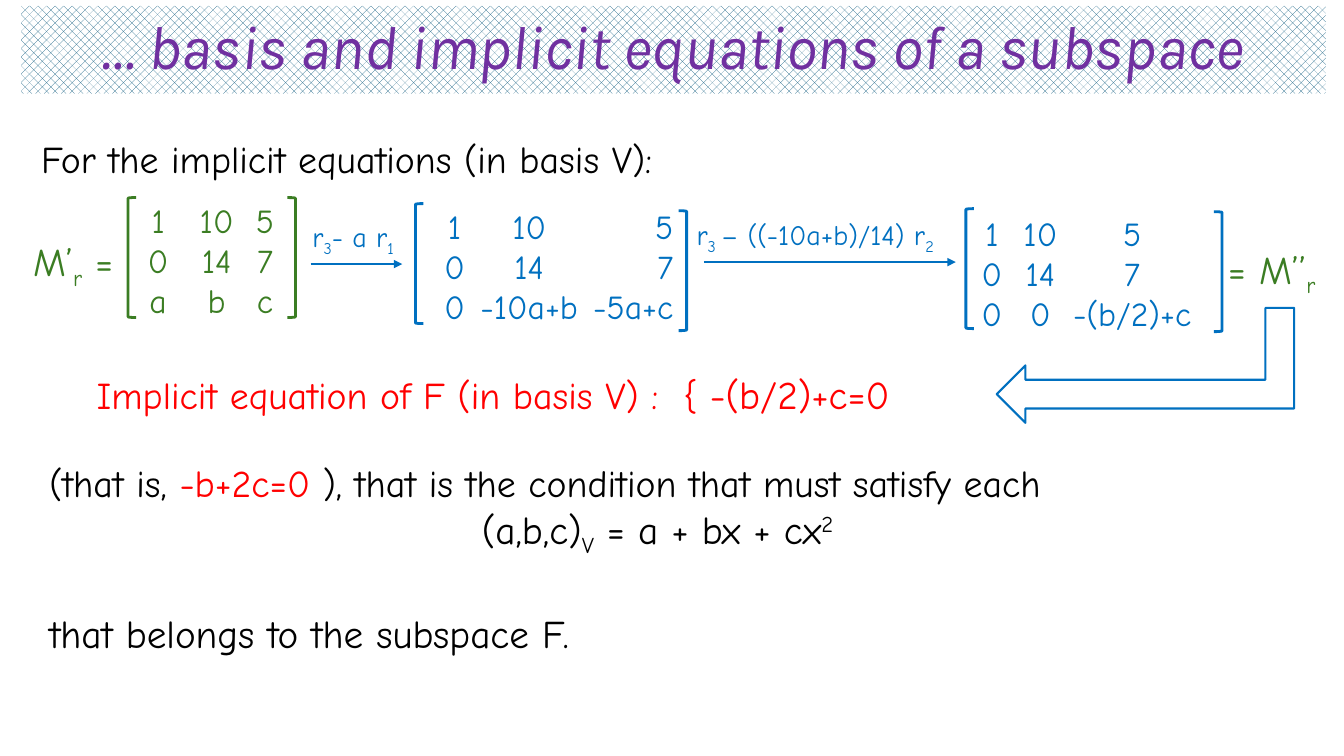
from lxml.etree import SubElement
from pptx import Presentation
from pptx.dml.color import RGBColor
from pptx.enum.dml import MSO_PATTERN
from pptx.enum.shapes import MSO_CONNECTOR, MSO_SHAPE
from pptx.enum.text import MSO_ANCHOR, PP_ALIGN
from pptx.oxml.ns import qn
from pptx.util import Inches, Pt

COLORS = {"title": "7030A0", "weave": "156082", "white": "FFFFFF", "black": "000000",
          "green": "3B7D23", "blue": "0070C0", "red": "FF0000"}
TITLE_FONT, BODY_FONT = "Karla", "Comic Neue"
SUB, SUP = -25000, 30000

TITLE = "… basis and implicit equations of a subspace"

# Runs are (text, format overrides).
LABELS = [
    # box, size, color, wrap, runs
    ((0.31, 1.3, 12.06, 1.01), 27, "black", True,
     [("For the implicit equations (in basis V):", {})]),
    ((0.23, 2.31, 1.06, 0.57), 28, "green", False,
     [("M’", {}), ("r", {"base": SUB}), (" =", {})]),
    ((3, 2.13, 1.14, 0.44), 20, "blue", True,
     [("r", {}), ("3", {"base": SUB}), ("- a r", {}), ("1", {"base": SUB})]),
    ((6.81, 2.11, 2.88, 0.44), 20, "blue", True,
     [("r", {}), ("3 ", {"base": SUB}), ("– ((-10a+b)/14) r", {}), ("2", {"base": SUB})]),
    ((12.08, 2.38, 1.25, 0.57), 28, "green", False,
     [("= M’’", {}), ("r", {"base": SUB})]),
    ((0.86, 3.62, 10.89, 1.04), 27, "red", True,
     [("Implicit equation of F (in basis V) :  { ", {}), ("-(b/2)+c=0", {"size": 28})]),
]

MATRICES = [
    {"box": (1.17, 1.93, 2.72, 2.05), "color": "green",
     "brackets": [(1.27, 1.96), (2.85, 1.96)],
     "tabs": [(0.3, "ctr"), (0.88, "ctr"), (1.36, "ctr")],
     "rows": [("1", "10", "5"), ("0", "14", "7"), ("a", "b", "c")]},
    {"box": (4.1, 1.99, 3.03, 2.05), "color": "blue",
     "brackets": [(4.12, 2.02), (6.73, 2.09)],
     "tabs": [(0.31, "ctr"), (1.05, "ctr"), (2.48, "r")],
     "rows": [("1", "10", "5"), ("0", "14", "7"), ("0", "-10a+b", "-5a+c")]},
    {"box": (9.44, 2.06, 3.03, 2.05), "color": "blue",
     "brackets": [(9.58, 2.07), (12.04, 2.1)],
     "tabs": [(0.3, "ctr"), (0.78, "ctr"), (1.69, "ctr")],
     "rows": [("1", "10", "5"), ("0", "14", "7"), ("0", "0", "-(b/2)+c")]},
]
BRACKET_SIZE = (0.08, 1.19)

ROW_ARROWS = [(3.08, 3.99, 2.62), (6.98, 9.48, 2.6)]  # start x, end x, y

CONCLUSION_BOX = (0.39, 4.51, 11.65, 1.83)
FORMULA_INDENT = 4.29
CONCLUSION = [
    [("(that is, ", {"size": 27}), ("-b+2c=0 ", {"size": 27, "color": "red"}),
     ("), that is the condition that must satisfy each", {"size": 27})],
    [("(a,b,c)", {}), ("V", {"base": SUB}), (" = a + bx + cx", {}), ("2", {"base": SUP})],
    [("that belongs to the subspace F.", {})],
]


def rgb(name):
    return RGBColor.from_string(COLORS[name])


def add_run(p, text, size=28, color="black", font=BODY_FONT, italic=False, base=0):
    r = p.add_run()
    r.text = text
    r.font.size, r.font.name, r.font.italic = Pt(size), font, italic
    r.font.color.rgb = rgb(color)
    if base:
        r.font._element.set("baseline", str(base))


def add_text(slide, box, paragraphs, wrap=True, **style):
    """Add a text box; each paragraph is a list of (text, overrides) runs."""
    tf = slide.shapes.add_textbox(*map(Inches, box)).text_frame
    tf.word_wrap = wrap
    for i, runs in enumerate(paragraphs):
        p = tf.paragraphs[0] if i == 0 else tf.add_paragraph()
        for text, overrides in runs:
            add_run(p, text, **{**style, **overrides})
    return tf


def add_outline(slide, kind, box, color, width):
    sp = slide.shapes.add_shape(kind, *map(Inches, box))
    sp.shadow.inherit = False
    sp.fill.background()
    sp.line.color.rgb = rgb(color)
    sp.line.width = Pt(width)
    return sp


def add_title(slide):
    sp = slide.shapes.add_shape(MSO_SHAPE.RECTANGLE, *map(Inches, (0.21, 0.06, 12.94, 0.87)))
    sp.shadow.inherit = False
    sp.line.fill.background()
    sp.fill.patterned()
    sp.fill.pattern = MSO_PATTERN.WEAVE
    sp.fill.fore_color.rgb = rgb("weave")
    sp.fill.back_color.rgb = rgb("white")
    tf = sp.text_frame
    tf.word_wrap, tf.vertical_anchor = True, MSO_ANCHOR.MIDDLE
    p = tf.paragraphs[0]
    p.alignment, p.line_spacing = PP_ALIGN.CENTER, 0.9
    add_run(p, TITLE, size=44, color="title", font=TITLE_FONT, italic=True)


def add_matrix(slide, matrix):
    """Add the entries, aligned in columns by tab stops, between two brackets."""
    lines = [[("\t" + "\t".join(row), {})] for row in matrix["rows"]]
    tf = add_text(slide, matrix["box"], lines, size=24, color=matrix["color"])
    for p in tf.paragraphs:
        tabs = SubElement(p._p.get_or_add_pPr(), qn("a:tabLst"))
        for pos, align in matrix["tabs"]:
            SubElement(tabs, qn("a:tab"), pos=str(Inches(pos)), algn=align)
    kinds = (MSO_SHAPE.LEFT_BRACKET, MSO_SHAPE.RIGHT_BRACKET)
    for kind, corner in zip(kinds, matrix["brackets"]):
        add_outline(slide, kind, corner + BRACKET_SIZE, matrix["color"], 2)


def add_row_arrow(slide, x1, x2, y):
    cx = slide.shapes.add_connector(MSO_CONNECTOR.STRAIGHT, *map(Inches, (x1, y, x2, y)))
    cx.line.color.rgb = rgb("blue")
    cx.line.width = Pt(2)
    SubElement(cx.line._get_or_add_ln(), qn("a:tailEnd"), type="triangle")
    SubElement(cx._element.spPr, qn("a:effectLst"))


def add_result_arrow(slide):
    sp = add_outline(slide, MSO_SHAPE.BENT_UP_ARROW, (10.79, 2.15, 1.14, 2.95), "blue", 1.5)
    sp.rotation = 270
    sp._element.spPr.find(qn("a:xfrm")).set("flipH", "1")


def add_conclusion(slide):
    condition, formula, ending = add_text(slide, CONCLUSION_BOX, CONCLUSION).paragraphs
    formula._p.get_or_add_pPr().set("marL", str(Inches(FORMULA_INDENT)))
    ending.space_before = Pt(36)


def main():
    prs = Presentation()
    prs.slide_width, prs.slide_height = Inches(13.33), Inches(7.5)
    slide = prs.slides.add_slide(prs.slide_layouts[6])
    add_title(slide)
    for box, size, color, wrap, runs in LABELS:
        add_text(slide, box, [runs], wrap=wrap, size=size, color=color)
    for matrix in MATRICES:
        add_matrix(slide, matrix)
    for arrow in ROW_ARROWS:
        add_row_arrow(slide, *arrow)
    add_result_arrow(slide)
    add_conclusion(slide)
    prs.save("out.pptx")


if __name__ == "__main__":
    main()
